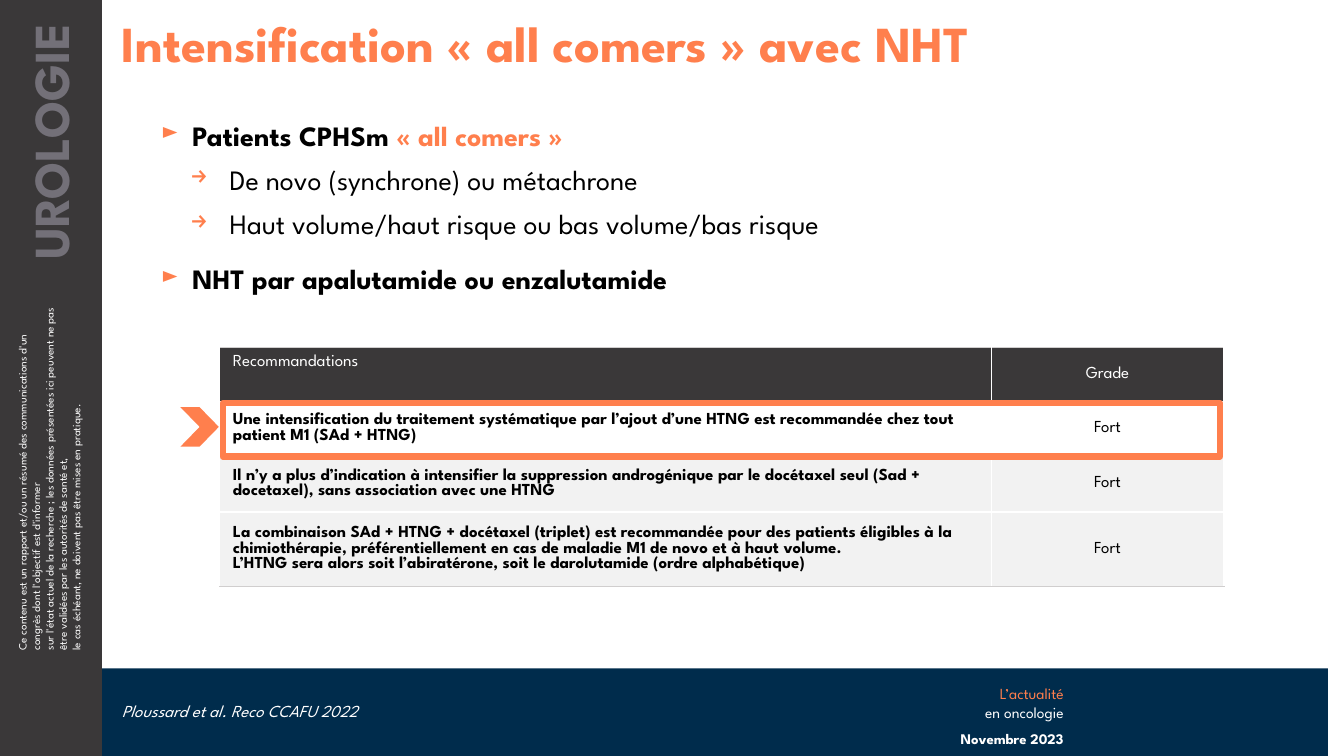
from lxml.etree import SubElement
from pptx import Presentation
from pptx.dml.color import RGBColor
from pptx.enum.shapes import MSO_SHAPE as SHAPE
from pptx.enum.text import MSO_ANCHOR as ANCHOR, PP_ALIGN as ALIGN
from pptx.oxml.ns import qn
from pptx.util import Inches, Pt

FONT = "League Spartan"
ORANGE = RGBColor(0xFF, 0x7F, 0x4D)
NAVY = RGBColor(0x00, 0x2C, 0x4C)
CHARCOAL = RGBColor(0x3A, 0x38, 0x39)
SLATE = RGBColor(0x73, 0x70, 0x78)
PALE = RGBColor(0xF2, 0xF2, 0xF2)
RULE = RGBColor(0xD0, 0xCE, 0xCE)
WHITE = RGBColor(0xFF, 0xFF, 0xFF)
BLACK = RGBColor(0, 0, 0)

WIDTH, HEIGHT = 13.33, 7.5
SIDEBAR = 1.01
FOOTER_TOP = 6.63
BULLETS = {"►": (0.31, -0.31), "→": (0.68, -0.39)}


def write(paragraph, runs, size, italic=False, **layout):
    for name, value in layout.items():
        setattr(paragraph, name, value)
    for text, color, bold in runs:
        for number, line in enumerate(text.split("\n")):
            if number:
                paragraph.add_line_break()
            run = paragraph.add_run()
            run.text = line
            style = {"name": FONT, "size": Pt(size), "bold": bold, "italic": italic}
            for name, value in style.items():
                setattr(run.font, name, value)
            run.font.color.rgb = color


def set_margins(target, insets):
    for side, inset in zip(("left", "top", "right", "bottom"), insets):
        setattr(target, f"margin_{side}", Inches(inset))


def add_text(slide, box, paragraphs=(), insets=(0.1, 0.05, 0.1, 0.05),
             anchor=ANCHOR.TOP, rotation=0):
    holder = slide.shapes.add_textbox(*map(Inches, box))
    holder.rotation = rotation
    frame = holder.text_frame
    frame.word_wrap = True
    frame.vertical_anchor = anchor
    set_margins(frame, insets)
    for number, content in enumerate(paragraphs):
        write(frame.add_paragraph() if number else frame.paragraphs[0], **content)
    return frame


def add_block(slide, kind, box, fill=None, line=None):
    block = slide.shapes.add_shape(kind, *map(Inches, box))
    block.shadow.inherit = False
    if fill is None:
        block.fill.background()
    else:
        block.fill.solid()
        block.fill.fore_color.rgb = fill
    if line is None:
        block.line.fill.background()
    else:
        block.line.color.rgb = line
        block.line.width = Pt(4.5)
    return block


def add_bullet(paragraph, mark):
    margin, indent = BULLETS[mark]
    props = paragraph._p.get_or_add_pPr()
    props.set("marL", str(Inches(margin)))
    props.set("indent", str(Inches(indent)))
    color = SubElement(props, qn("a:buClr"))
    SubElement(color, qn("a:srgbClr"), val=str(ORANGE))
    SubElement(props, qn("a:buSzPct"), val="80000")
    SubElement(props, qn("a:buChar"), char=mark)


def add_border(cell, side):
    line = SubElement(cell._tc.get_or_add_tcPr(), qn(f"a:{side}"), w=str(Pt(1)))
    fill = SubElement(line, qn("a:solidFill"))
    SubElement(fill, qn("a:srgbClr"), val=str(RULE))


def draw_sidebar(slide, box):
    left, top, width, height = box
    add_block(slide, SHAPE.RECTANGLE, box, CHARCOAL)

    def add_vertical(middle, length, depth, center, **content):
        place = (left + center - length / 2, top + middle - depth / 2, length, depth)
        add_text(slide, place, rotation=270, **content)

    notice = (
        "Ce contenu est un rapport et/ou un résumé des communications d'un "
        "congrès dont l'objectif est d'informer\n"
        "sur l'état actuel de la recherche ; les données présentées ici peuvent "
        "ne pas être validées par les autorités de santé et,\n"
        "le cas échéant, ne doivent pas être mises en pratique.")
    add_vertical(4.75, 3.6, 0.77, 0.49,
                 paragraphs=[dict(runs=[(notice, WHITE, False)], size=8)])
    add_vertical(1.53, 3.07, 0.71, 0.5, insets=(0.1, 0.05, 0.24, 0.05),
                 paragraphs=[dict(runs=[("UROLOGIE", SLATE, True)], size=36,
                                  alignment=ALIGN.RIGHT)])


def draw_footer(slide, box):
    left, top, width, height = box
    add_block(slide, SHAPE.RECTANGLE, box, NAVY)
    add_text(slide, (left + 0.1, top, 5.64, height),
             [dict(runs=[("Ploussard et al. Reco CCAFU 2022", WHITE, False)],
                   size=12, italic=True, line_spacing=0.9)], anchor=ANCHOR.MIDDLE)
    issue = left + 8
    add_text(slide, (issue, top + 0.11, 1.64, 0.47),
             [dict(runs=[("L’actualité\n", ORANGE, False),
                         ("en oncologie", WHITE, False)],
                   size=11, alignment=ALIGN.RIGHT)])
    add_text(slide, (issue, top + 0.54, 1.54, 0.27),
             [dict(runs=[("Novembre 2023", WHITE, True)], size=10.5,
                   alignment=ALIGN.RIGHT, line_spacing=0.9)],
             insets=(0.1, 0.09, 0, 0.05))


def draw_title(slide, box):
    add_text(slide, box,
             [dict(runs=[("Intensification «\u00a0all comers\u00a0» avec NHT", ORANGE, True)],
                   size=36, line_spacing=0.9)], insets=(0.2, 0.19, 0.1, 0.05))


def draw_key_points(slide, box):
    points = [
        ("►", 0, [("Patients CPHSm ", BLACK, True), ("«\u00a0all comers\u00a0»", ORANGE, True)]),
        ("→", 10, [("De novo (synchrone) ou métachrone", BLACK, False)]),
        ("→", 10, [("Haut volume/haut risque ou bas volume/bas risque", BLACK, False)]),
        ("►", 18, [("NHT par apalutamide ou enzalutamide", BLACK, True)]),
    ]
    frame = add_text(slide, box, insets=(0.1, 0.05, 0.1, 0.05))
    for number, (mark, gap, runs) in enumerate(points):
        point = frame.add_paragraph() if number else frame.paragraphs[0]
        point.line_spacing = 0.9
        point.space_before = Pt(gap)
        add_bullet(point, mark)
        write(point, runs, 20)


def draw_recommendations(slide, box):
    left, top, width, height = box
    rows = [
        (0.53, CHARCOAL, ["Recommandations"], "Grade"),
        (0.51, None, ["Une intensification du traitement systématique par l’ajout d’une "
                      "HTNG est recommandée chez tout patient M1 (SAd + HTNG)"], "Fort"),
        (0.56, PALE, ["Il n’y a plus d’indication à intensifier la suppression androgénique "
                      "par le docétaxel seul (Sad + docetaxel), sans association avec une HTNG"],
         "Fort"),
        (0.74, PALE, ["La combinaison SAd + HTNG + docétaxel (triplet) est recommandée pour "
                      "des patients éligibles à la chimiothérapie, préférentiellement en cas "
                      "de maladie M1 de novo et à haut volume.",
                      "L’HTNG sera alors soit l’abiratérone, soit le darolutamide "
                      "(ordre alphabétique)"], "Fort"),
    ]
    table = slide.shapes.add_table(len(rows), 2, *map(Inches, box)).table
    table.first_row = table.horz_banding = False
    for column, share in zip(table.columns, (7.65, 2.31)):
        column.width = Inches(share)
    for r, (row_height, fill, advice, grade) in enumerate(rows):
        table.rows[r].height = Inches(row_height)
        header = r == 0
        for c, lines in enumerate((advice, [grade])):
            cell = table.cell(r, c)
            side = 0 if header and c else 0.13
            set_margins(cell, (side, 0.07, side, 0.07))
            cell.vertical_anchor = ANCHOR.TOP if header and not c else ANCHOR.MIDDLE
            if header:
                add_border(cell, "lnT")
            add_border(cell, "lnB")
            if fill is None:
                cell.fill.background()
            else:
                cell.fill.solid()
                cell.fill.fore_color.rgb = fill
            for number, line in enumerate(lines):
                paragraph = (cell.text_frame.add_paragraph() if number
                             else cell.text_frame.paragraphs[0])
                write(paragraph, [(line, WHITE if header else BLACK, not header and not c)],
                      12, alignment=ALIGN.CENTER if c else ALIGN.LEFT)
    frame = add_block(slide, SHAPE.ROUNDED_RECTANGLE,
                      (left + 0.03, top + 0.55, width - 0.07, 0.53), line=ORANGE)
    frame.adjustments[0] = 0
    add_block(slide, SHAPE.CHEVRON, (left - 0.39, top + 0.59, 0.38, 0.39), ORANGE)


def main():
    deck = Presentation()
    deck.slide_width, deck.slide_height = Inches(WIDTH), Inches(HEIGHT)
    slide = deck.slides.add_slide(deck.slide_layouts[6])
    draw_footer(slide, (SIDEBAR, FOOTER_TOP, 12.16, HEIGHT - FOOTER_TOP))
    draw_sidebar(slide, (0, 0, SIDEBAR, HEIGHT))
    draw_title(slide, (SIDEBAR, 0, WIDTH - SIDEBAR, 0.57))
    draw_key_points(slide, (1.5, 1.16, 8.05, 1.9))
    draw_recommendations(slide, (2.18, 3.45, 9.96, 2.34))
    deck.save("out.pptx")


if __name__ == "__main__":
    main()
